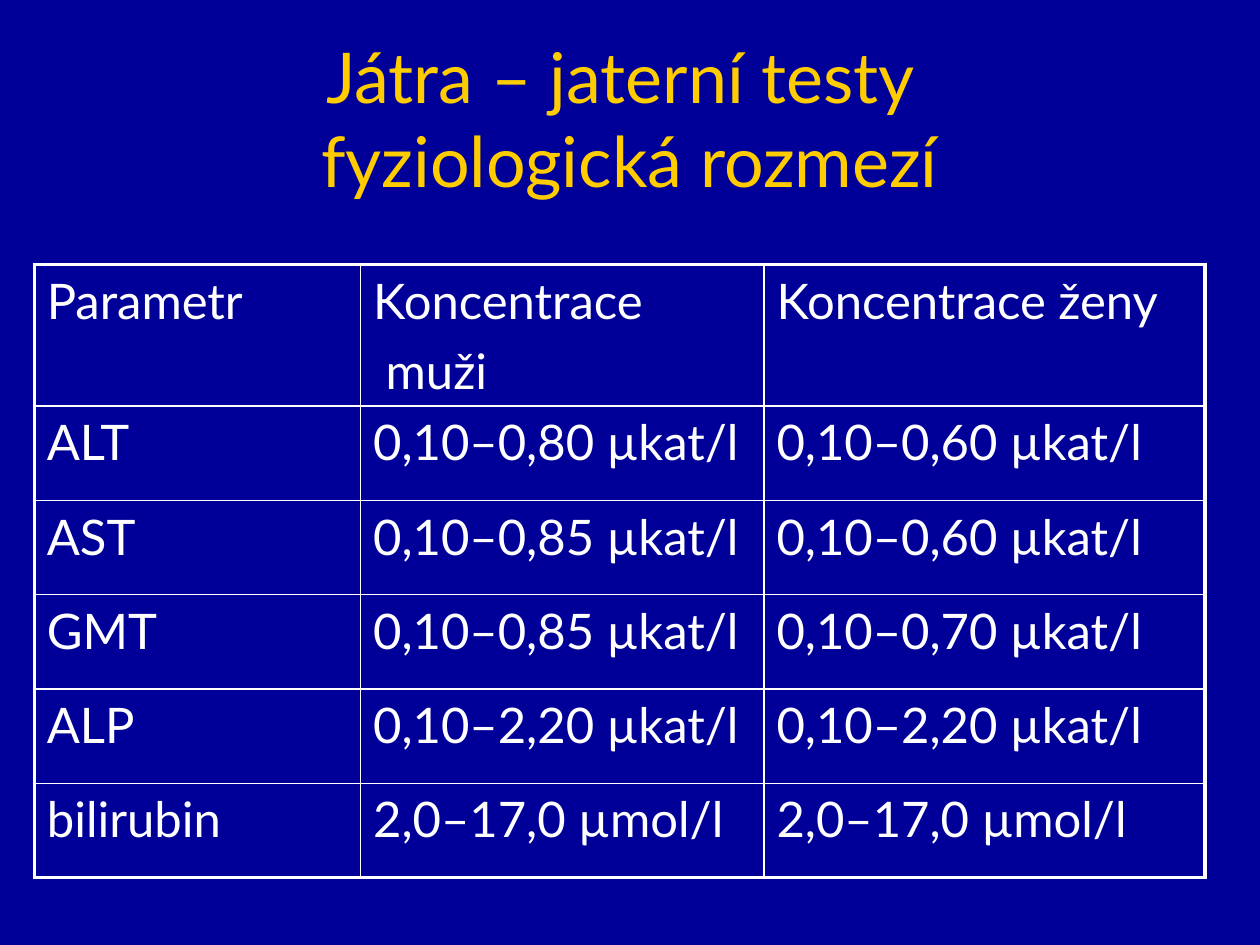
from lxml import etree
from pptx import Presentation
from pptx.dml.color import RGBColor
from pptx.enum import text
from pptx.oxml import ns
from pptx.util import Pt

NAVY, GOLD, WHITE = "000099", "FFCC00", "FFFFFF"
THIN, THICK = 1, 2.25


def color(hex_code):
    return RGBColor.from_string(hex_code)


def write(frame, content, *, size, fill, align=text.PP_ALIGN.LEFT, gap=0):
    """Put each list item in its own paragraph; gap separates paragraphs."""
    for i, line in enumerate(content):
        paragraph = frame.paragraphs[0] if i == 0 else frame.add_paragraph()
        paragraph.text = line
        paragraph.alignment = align
        if i:
            paragraph.space_before = Pt(gap)
        for run in paragraph.runs:
            run.font.name = "Lato"
            run.font.size = Pt(size)
            run.font.color.rgb = color(fill)


class Deck:
    def __init__(self, width, height, background):
        self.presentation = Presentation()
        self.presentation.slide_width = Pt(width)
        self.presentation.slide_height = Pt(height)
        self.slide = self.presentation.slides.add_slide(
            self.presentation.slide_layouts[6])
        self.slide.background.fill.solid()
        self.slide.background.fill.fore_color.rgb = color(background)

    def title(self, content, left, top, width, height):
        heading = self.slide.shapes.add_textbox(
            Pt(left), Pt(top), Pt(width), Pt(height))
        frame = heading.text_frame
        frame.word_wrap = True
        frame.vertical_anchor = text.MSO_ANCHOR.MIDDLE
        write(frame, [content], size=40, fill=GOLD,
              align=text.PP_ALIGN.CENTER)

    def borders(self, cell, widths):
        properties = cell._tc.get_or_add_tcPr()
        for i, (side, width) in enumerate(widths.items()):
            line = etree.Element(ns.qn(f"a:ln{side}"), w=str(Pt(width)))
            fill = etree.SubElement(line, ns.qn("a:solidFill"))
            etree.SubElement(fill, ns.qn("a:srgbClr"), val=WHITE)
            properties.insert(i, line)

    def table(self, rows, left, top, widths, heights):
        grid = self.slide.shapes.add_table(
            len(rows), len(widths), Pt(left), Pt(top),
            Pt(sum(widths)), Pt(sum(heights))).table
        grid.first_row = grid.horz_banding = False
        for column, width in zip(grid.columns, widths):
            column.width = Pt(width)
        last_row, last_column = len(rows) - 1, len(widths) - 1
        for r, (row, height) in enumerate(zip(rows, heights)):
            grid.rows[r].height = Pt(height)
            for c, content in enumerate(row):
                cell = grid.cell(r, c)
                cell.fill.background()
                write(cell.text_frame, content.split("\n"),
                      size=28, fill=WHITE, gap=6.4)
                # Thick outer frame, thin inner lines
                self.borders(cell, {
                    "L": THICK if c == 0 else THIN,
                    "R": THICK if c == last_column else THIN,
                    "T": THICK if r == 0 else THIN,
                    "B": THICK if r == last_row else THIN})


def main():
    deck = Deck(720, 540, NAVY)

    # Title
    deck.title("Játra – jaterní testy\v fyziologická rozmezí",
               25.2, 23, 658.8, 88.6)

    # Reference ranges for men and women
    ranges = [
        ("Parametr", "Koncentrace\n muži", "Koncentrace ženy"),
        ("ALT", "0,10–0,80 µkat/l", "0,10–0,60 µkat/l"),
        ("AST", "0,10–0,85 µkat/l", "0,10–0,60 µkat/l"),
        ("GMT", "0,10–0,85 µkat/l", "0,10–0,70 µkat/l"),
        ("ALP", "0,10–2,20 µkat/l", "0,10–2,20 µkat/l"),
        ("bilirubin", "2,0–17,0 µmol/l", "2,0–17,0 µmol/l"),
    ]
    deck.table(ranges, 19.6, 151.2, [186.5, 230.5, 252],
               [80] + [53.9] * (len(ranges) - 1))

    deck.presentation.save("out.pptx")


if __name__ == "__main__":
    main()
